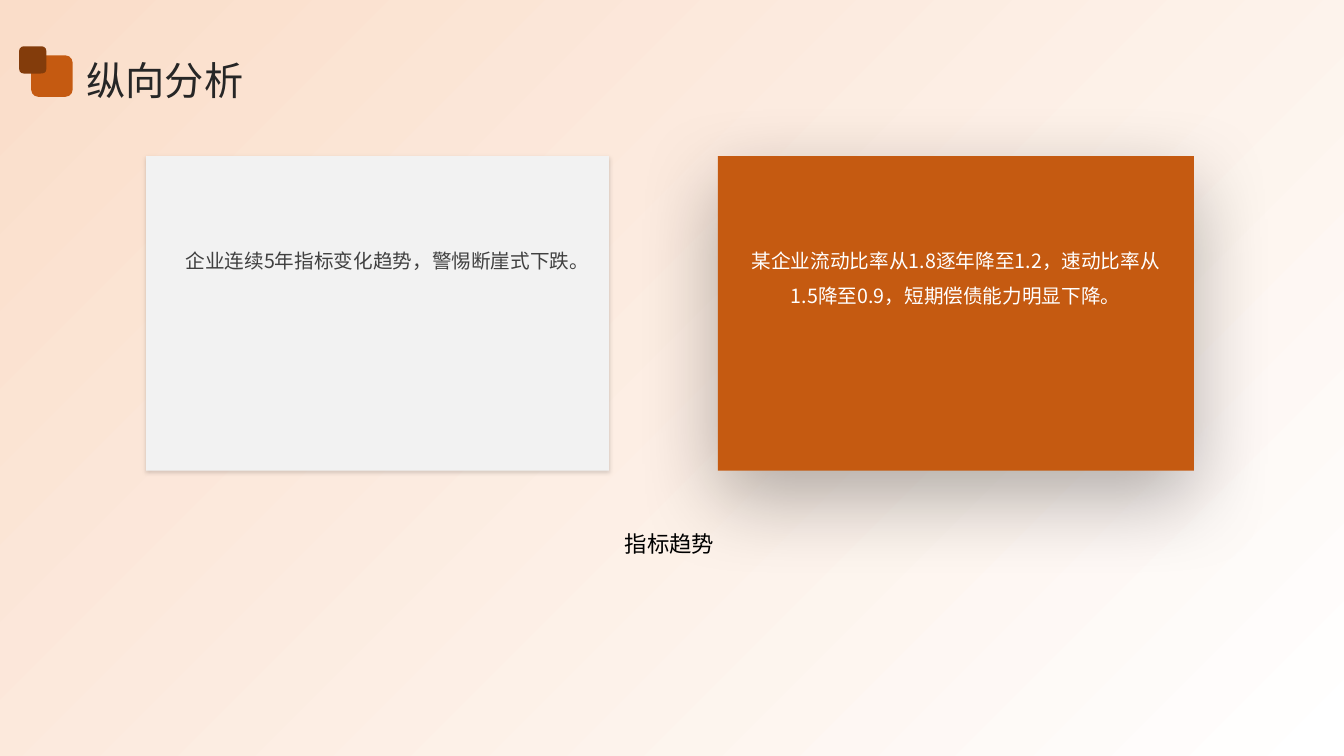
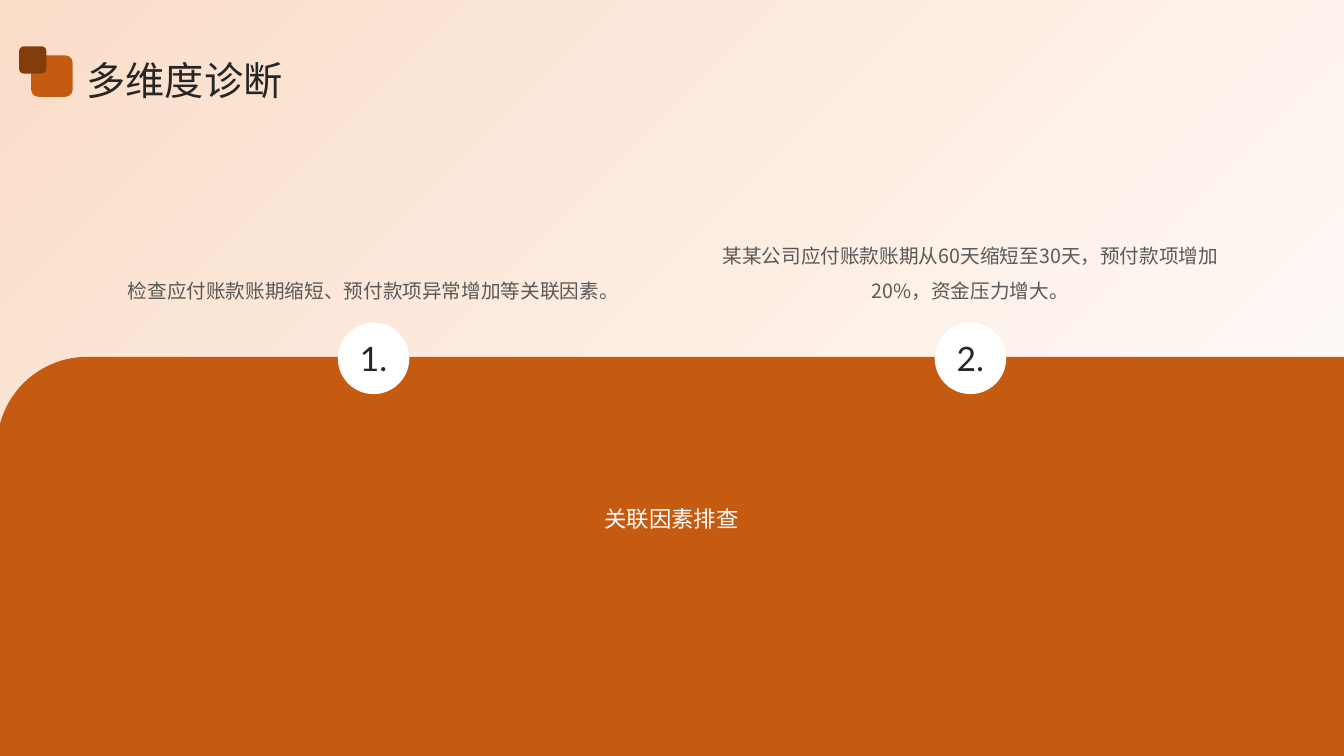
from lxml.etree import SubElement
from pptx import Presentation
from pptx.dml.color import RGBColor
from pptx.enum.shapes import MSO_SHAPE as SHAPE
from pptx.enum.text import MSO_ANCHOR as ANCHOR, MSO_AUTO_SIZE as AUTO, PP_ALIGN as ALIGN
from pptx.oxml.ns import qn
from pptx.util import Inches, Pt

WHITE = RGBColor(0xFF, 0xFF, 0xFF)
BLACK = RGBColor(0x00, 0x00, 0x00)
PEACH = RGBColor(0xFA, 0xDD, 0xC9)
ORANGE = RGBColor(0xC5, 0x5A, 0x11)
BROWN = RGBColor(0x83, 0x3C, 0x0B)
PALE = RGBColor(0xF2, 0xF2, 0xF2)
INK = RGBColor(0x26, 0x26, 0x26)
DARK = RGBColor(0x40, 0x40, 0x40)
GREY = RGBColor(0x59, 0x59, 0x59)
CJK, LATIN = "Noto Sans CJK SC", "Lato"
WIDTH, HEIGHT = 13.33, 7.5
FLUSH = (0, 0, 0, 0)


def write(sp, text, size=14, color=GREY, font=CJK, align=ALIGN.CENTER,
          anchor=ANCHOR.TOP, spacing=1.5, insets=(0.1, 0.05, 0.1, 0.05)):
    tf = sp.text_frame
    tf.word_wrap = True
    tf.vertical_anchor = anchor
    tf.margin_left, tf.margin_top, tf.margin_right, tf.margin_bottom = map(Inches, insets)
    p = tf.paragraphs[0]
    p.alignment, p.line_spacing = align, spacing
    r = p.add_run()
    r.text = text
    r.font.size, r.font.name = Pt(size), font
    r.font.color.rgb = color
    SubElement(r.font._element, qn("a:ea"), typeface=font)


class Deck:
    """Holds the shared style and the current slide."""

    def __init__(self):
        self.prs = Presentation()
        self.prs.slide_width, self.prs.slide_height = Inches(WIDTH), Inches(HEIGHT)

    def start(self):
        self.s = self.prs.slides.add_slide(self.prs.slide_layouts[6])
        fill = self.shape(SHAPE.RECTANGLE, 0, 0, WIDTH, HEIGHT, WHITE).fill
        fill.gradient()
        fill.gradient_angle = 135
        for stop, color in zip(fill.gradient_stops, (WHITE, PEACH)):
            stop.color.rgb = color

    def shape(self, kind, x, y, w, h, color, group=None):
        sp = (group or self.s).shapes.add_shape(kind, *map(Inches, (x, y, w, h)))
        sp.shadow.inherit = False
        sp.fill.solid()
        sp.fill.fore_color.rgb = color
        sp.line.fill.background()
        return sp

    def text(self, x, y, w, h, text, **style):
        sp = self.s.shapes.add_textbox(*map(Inches, (x, y, w, h)))
        write(sp, text, **style)
        return sp

    def title(self, text):
        self.text(0.86, 0.51, 11.67, 0.51, text, size=28, color=INK, align=ALIGN.LEFT,
                  anchor=ANCHOR.MIDDLE, spacing=1.1, insets=FLUSH)
        group = self.s.shapes.add_group_shape()
        for x, y, side, color in ((0.31, 0.55, 0.41, ORANGE), (0.19, 0.46, 0.27, BROWN)):
            self.shape(SHAPE.ROUNDED_RECTANGLE, x, y, side, side, color, group)

    def card(self, x, w, fill, text, color, opacity, blur, distance):
        sp = self.shape(SHAPE.RECTANGLE, x, 1.55, w, 3.12, fill)
        effects = sp.element.spPr.find(qn("a:effectLst"))
        shadow = SubElement(effects, qn("a:outerShdw"), blurRad=str(Pt(blur)),
                            dist=str(Pt(distance)), dir="5400000", algn="t", rotWithShape="0")
        tint = SubElement(shadow, qn("a:srgbClr"), val=str(BLACK))
        SubElement(tint, qn("a:alpha"), val=str(opacity * 1000))
        write(sp, text, color=color, insets=(0.3, 0.8, 0.3, 0.05))

    def panel(self):
        sp = self.shape(SHAPE.ROUND_1_RECTANGLE, -0.03, 3.54, 13.39, 3.96, ORANGE)
        sp.adjustments[0] = 0.226
        sp.element.spPr.get_or_add_xfrm().set("flipH", "1")

    def step(self, x, number, text):
        column, circle, label = 5.13, 0.71, 0.76
        center = x + column / 2
        self.text(x, 1.75, column, 1.25, text, anchor=ANCHOR.BOTTOM, insets=FLUSH)
        self.shape(SHAPE.OVAL, center - circle / 2, 3.2, circle, circle, WHITE)
        sp = self.text(center - label / 2, 3.3, label, 0.43, f"{number}.",
                       size=24, color=INK, font=LATIN, spacing=1.0)
        sp.text_frame.auto_size = AUTO.SHAPE_TO_FIT_TEXT


def trend_slide(deck):
    deck.start()
    deck.card(1.45, 4.59, PALE, "企业连续5年指标变化趋势，警惕断崖式下跌。",
              DARK, opacity=15, blur=3, distance=1)
    deck.card(7.12, 4.72, ORANGE,
              "某企业流动比率从1.8逐年降至1.2，速动比率从1.5降至0.9，短期偿债能力明显下降。",
              WHITE, opacity=30, blur=60, distance=20)
    deck.text(1.44, 5.08, 10.4, 1.67, "指标趋势", size=16, color=BLACK)
    deck.title("纵向分析")


def diagnosis_slide(deck):
    deck.start()
    deck.panel()
    deck.text(1.14, 4.25, 11.04, 1.66, "关联因素排查", size=16, color=WHITE,
              anchor=ANCHOR.MIDDLE, insets=FLUSH)
    steps = ("检查应付账款账期缩短、预付款项异常增加等关联因素。",
             "某某公司应付账款账期从60天缩短至30天，预付款项增加20%，资金压力增大。")
    for i, text in enumerate(steps):
        deck.step(1.14 + i * 5.92, i + 1, text)
    deck.title("多维度诊断")


def main():
    deck = Deck()
    trend_slide(deck)
    diagnosis_slide(deck)
    deck.prs.save("out.pptx")


if __name__ == "__main__":
    main()
